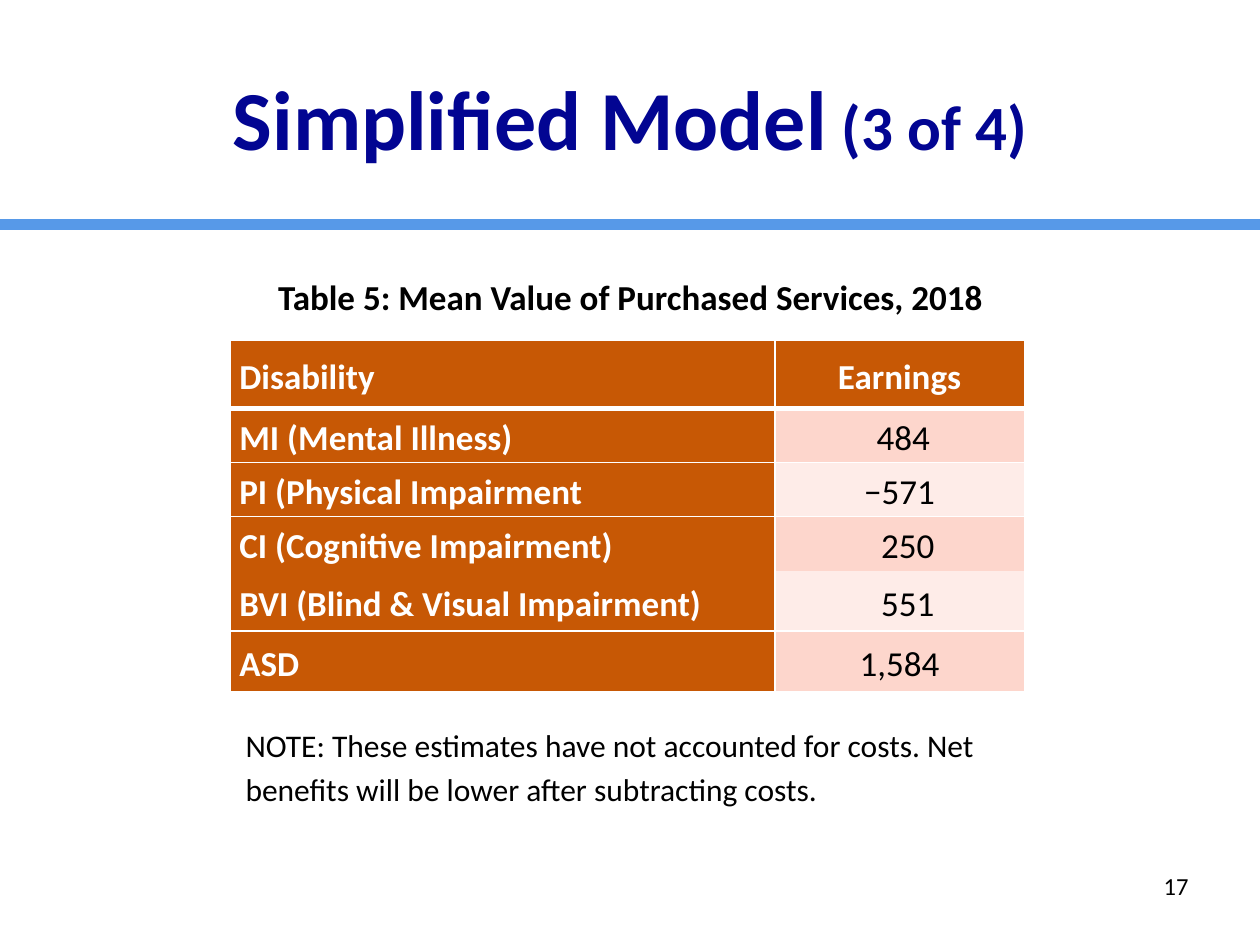
from lxml import etree
from pptx import Presentation
from pptx.dml.color import RGBColor
from pptx.enum.shapes import MSO_CONNECTOR
from pptx.enum.text import MSO_ANCHOR, PP_ALIGN
from pptx.oxml.ns import qn
from pptx.util import Inches, Pt

NAVY = RGBColor(0x02, 0x05, 0x92)
BLUE = RGBColor(0x57, 0x99, 0xE8)
ORANGE = RGBColor(0xC7, 0x58, 0x05)
PINK = RGBColor(0xFD, 0xD6, 0xCC)
PALE_PINK = RGBColor(0xFE, 0xEC, 0xE8)
WHITE = RGBColor(0xFF, 0xFF, 0xFF)
BLACK = RGBColor(0x00, 0x00, 0x00)


def add_run(paragraph, text, size, color, bold=False):
    run = paragraph.add_run()
    run.text = text
    run.font.name = "Calibri"
    run.font.size = Pt(size)
    run.font.bold = bold
    run.font.color.rgb = color


def set_border(cell, side, width):
    line = etree.SubElement(cell._tc.get_or_add_tcPr(), qn(f"a:ln{side}"), w=str(Pt(width)))
    if width:
        fill = etree.SubElement(line, qn("a:solidFill"))
        etree.SubElement(fill, qn("a:srgbClr"), val=str(WHITE))
    else:
        etree.SubElement(line, qn("a:noFill"))


presentation = Presentation()
presentation.slide_width = Inches(10)
presentation.slide_height = Inches(7.5)
slide = presentation.slides.add_slide(presentation.slide_layouts[5])

# Rule under the title
for y, color, width in [(1.78, BLUE, 7), (1.73, WHITE, 0.5)]:
    rule = slide.shapes.add_connector(
        MSO_CONNECTOR.STRAIGHT, Inches(0), Inches(y), Inches(10), Inches(y))
    rule.line.color.rgb = color
    rule.line.width = Pt(width)
    etree.SubElement(rule._element.spPr, qn("a:effectLst"))

# Title
title = slide.shapes.title
title.left, title.top, title.width, title.height = (
    Inches(0.5), Inches(0.3), Inches(9), Inches(1.25))
title.text_frame.vertical_anchor = MSO_ANCHOR.MIDDLE
paragraph = title.text_frame.paragraphs[0]
paragraph.alignment = PP_ALIGN.CENTER
add_run(paragraph, "Simplified Model", 48, NAVY, True)
add_run(paragraph, " (3 of 4)", 36, NAVY, True)

# Caption, note and page number
NOTE = ("NOTE: These estimates have not accounted for costs. "
        "Net benefits will be lower after subtracting costs.")
text_boxes = [
    ((1.98, 2.09, 6.05, 0.47), "Table 5: Mean Value of Purchased Services, 2018",
     20, True, PP_ALIGN.CENTER, MSO_ANCHOR.TOP, 1.15),
    ((1.85, 5.67, 6.75, 0.78), NOTE, 18, False, PP_ALIGN.LEFT, MSO_ANCHOR.TOP, 1.15),
    ((9, 6.83, 0.67, 0.4), "17", 14, False, PP_ALIGN.CENTER, MSO_ANCHOR.MIDDLE, 1.0),
]
for box, text, size, bold, alignment, anchor, spacing in text_boxes:
    frame = slide.shapes.add_textbox(*map(Inches, box)).text_frame
    frame.word_wrap = True
    frame.vertical_anchor = anchor
    paragraph = frame.paragraphs[0]
    paragraph.alignment = alignment
    paragraph.line_spacing = spacing
    add_run(paragraph, text, size, BLACK, bold)

# Earnings table: label, value, row height, left indent of the value
rows = [
    ("Disability", "Earnings", 0.54, 0),
    ("MI (Mental Illness)", "484", 0.43, 0.06),
    ("PI (Physical Impairment", "−571", 0.43, 0),
    ("CI (Cognitive Impairment)", "250", 0.43, 0.13),
    ("BVI (Blind & Visual Impairment)", "551", 0.48, 0.13),
    ("ASD", "1,584", 0.48, 0),
]
# Width of the horizontal border above each row, then below the last
horizontal_borders = [1, 3, 1, 1, 0, 1, 1]

table = slide.shapes.add_table(
    len(rows), 2, Inches(1.83), Inches(2.7), Inches(6.3), Inches(2.79)).table
table.horz_banding = False
table.columns[0].width = Inches(4.32)
table.columns[1].width = Inches(1.98)

for row, (label, value, height, indent) in enumerate(rows):
    table.rows[row].height = Inches(height)
    for column, text in enumerate((label, value)):
        cell = table.cell(row, column)
        is_heading = row == 0 or column == 0
        set_border(cell, "L", 1)
        set_border(cell, "R", 1)
        set_border(cell, "T", horizontal_borders[row])
        set_border(cell, "B", horizontal_borders[row + 1])
        cell.fill.solid()
        cell.fill.fore_color.rgb = ORANGE if is_heading else (PALE_PINK, PINK)[row % 2]
        cell.vertical_anchor = MSO_ANCHOR.MIDDLE
        cell.margin_left = Inches(0.07 + indent * column)
        cell.margin_right = Inches(0.07)
        cell.margin_top = cell.margin_bottom = 0
        paragraph = cell.text_frame.paragraphs[0]
        paragraph.alignment = PP_ALIGN.CENTER if column else PP_ALIGN.LEFT
        paragraph.line_spacing = 1.15
        add_run(paragraph, text, 20, WHITE if is_heading else BLACK, is_heading)

presentation.save("out.pptx")
